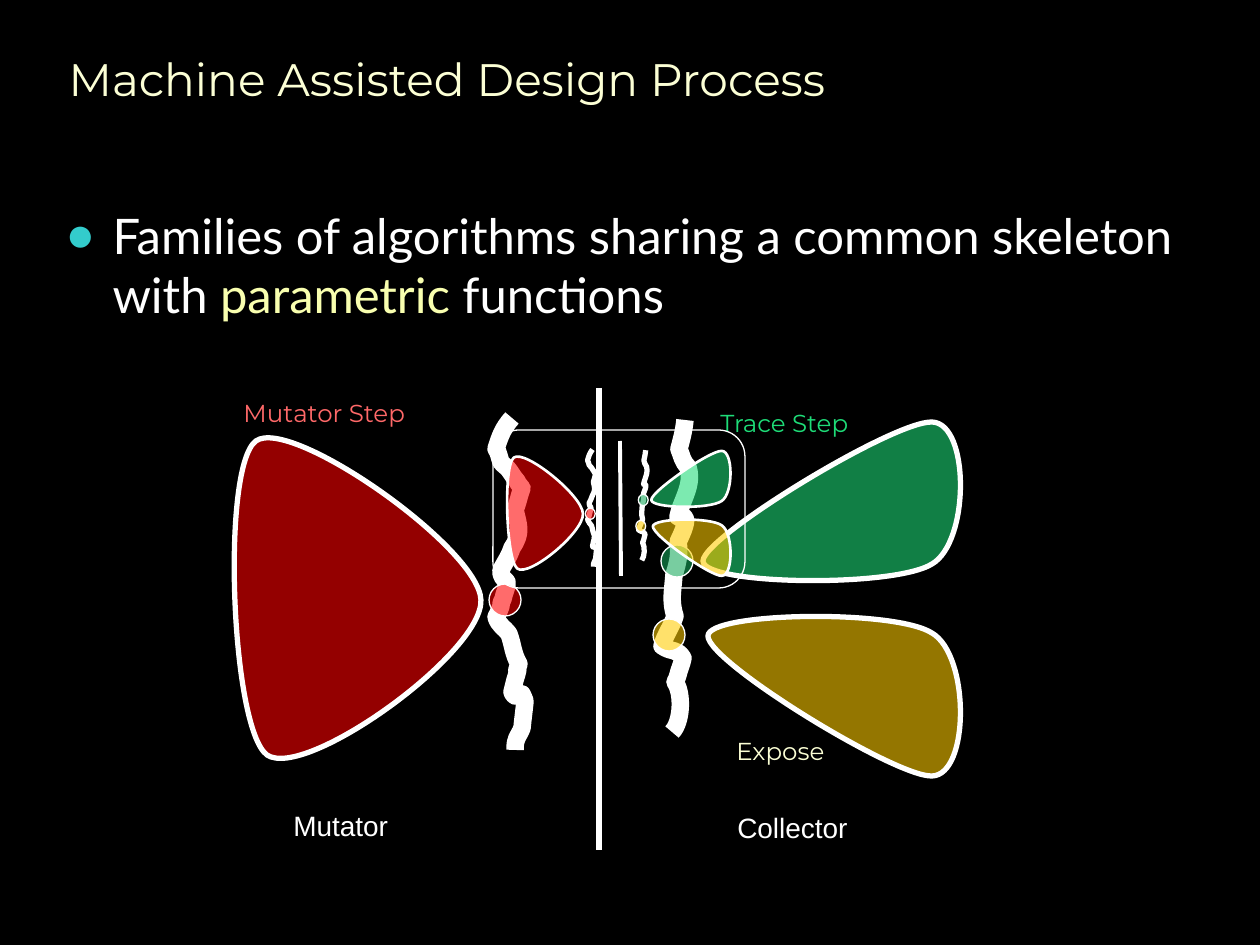
from lxml import etree
from pptx import Presentation
from pptx import util as u
from pptx.dml import color
from pptx.enum import shapes, text
from pptx.oxml import ns

PX = u.Inches(1) / 126
COLORS = {
    "black": "000000", "white": "FFFFFF", "cream": "FCFFD5",
    "accent": "F9FFAF", "bullet": "33CCCC", "red": "FF0000",
    "pink": "FF6969", "green": "1EDC78", "dark green": "17A95D",
    "gold": "FFCC00",
}
OPACITY = 58

# Bezier outlines: a start point, then three points for each curve
LOBES = {
    "red": [(256, 441), (291, 416), (479, 548), (481, 600),
            (483, 653), (305, 781), (267, 755),
            (231, 728), (221, 467), (256, 441)],
    "green": [(932, 422), (970, 423), (970, 542), (932, 564),
              (893, 588), (703, 585), (703, 561),
              (703, 537), (893, 421), (932, 422)],
    "gold": [(932, 776), (970, 775), (970, 655), (932, 633),
             (895, 609), (708, 612), (708, 636),
             (708, 662), (895, 777), (932, 776)],
}
MUTATOR_STRAND = [
    (512, 418), (503, 428), (500, 436), (496, 449),
    (498, 450), (500, 460), (501, 462), (503, 465), (507, 467), (509, 470),
    (512, 474), (514, 478), (517, 481), (518, 484), (522, 488), (522, 488),
    (519, 496), (518, 503), (515, 510), (519, 527), (522, 533), (512, 548),
    (509, 557), (505, 562), (501, 570), (501, 573), (501, 576), (503, 578),
    (504, 580), (507, 580), (507, 582), (508, 586), (504, 593), (503, 599),
    (501, 601), (501, 604), (501, 606), (500, 610), (496, 617), (496, 617),
    (499, 626), (504, 627), (509, 634), (513, 645), (513, 654), (519, 664),
    (513, 680), (522, 658), (515, 680), (514, 684), (512, 692), (512, 692),
    (513, 693), (513, 696), (515, 696), (517, 697), (519, 693), (522, 694),
    (523, 696), (524, 698), (525, 701), (524, 711), (523, 718), (522, 728),
    (518, 738), (515, 737), (515, 750),
]
COLLECTOR_STRAND = [
    (685, 420), (684, 430), (682, 438), (679, 449),
    (682, 456), (682, 461), (688, 467), (692, 481), (687, 491), (682, 504),
    (680, 508), (678, 517), (678, 517), (680, 517), (684, 515), (685, 518),
    (688, 522), (680, 538), (678, 542), (680, 553), (678, 563), (674, 575),
    (673, 590), (670, 601), (675, 616), (672, 626), (665, 635), (662, 646),
    (672, 653), (677, 648), (683, 658), (682, 664), (679, 670), (678, 675),
    (677, 679), (675, 682), (675, 682), (683, 693), (682, 722), (672, 732),
]
NODES = [(489, 584, "red"), (661, 545, "dark green"), (653, 619, "gold")]
NODE_SIZE = 32

# (scale x, scale y, shift x, shift y) of each drawing of the diagram
FULL = (1, 1, 0, 0)
NESTED = (4 / 13, 6 / 17, 435, 302)


def emu(px):
    return u.Emu(round(px * PX))


def rgb(name):
    return color.RGBColor.from_string(COLORS[name])


def add_text(p, content, size=14, font="Montserrat", ink="white"):
    r = p.add_run()
    r.text = content
    r.font.size, r.font.name = u.Pt(size), font
    r.font.color.rgb = rgb(ink)


def bend(sp, closed):
    """Turn each three straight segments of a freeform into one Bezier curve."""
    outline = sp._element.spPr.find(".//" + ns.qn("a:path"))
    segments = outline.findall(ns.qn("a:lnTo"))
    for i in range(0, len(segments), 3):
        curve = etree.SubElement(outline, ns.qn("a:cubicBezTo"))
        for segment in segments[i:i + 3]:
            curve.append(segment[0])
            outline.remove(segment)
    if closed:
        etree.SubElement(outline, ns.qn("a:close"))


class Deck:
    def __init__(self):
        self.prs = Presentation()
        self.prs.slide_width, self.prs.slide_height = emu(1260), emu(945)
        self.s = self.prs.slides.add_slide(self.prs.slide_layouts[1])
        self.s.background.fill.solid()
        self.s.background.fill.fore_color.rgb = rgb("black")
        self.group()

    def group(self, view=FULL):
        self.view = view
        self.target = self.s.shapes.add_group_shape().shapes

    def style(self, sp, fill, width):
        sp.shadow.inherit = False
        if fill:
            sp.fill.solid()
            sp.fill.fore_color.rgb = rgb(fill)
            clr = sp.fill._xPr.find(".//" + ns.qn("a:srgbClr"))
            etree.SubElement(clr, ns.qn("a:alpha"), val=str(OPACITY * 1000))
        else:
            sp.fill.background()
        sp.line.color.rgb, sp.line.width = rgb("white"), u.Pt(width)

    def curve(self, points, width, fill=None):
        kx, ky, dx, dy = self.view
        pts = [(emu(x * kx + dx), emu(y * ky + dy)) for x, y in points]
        fb = self.target.build_freeform(*pts[0])
        fb.add_line_segments(pts[1:], close=False)
        sp = fb.convert_to_shape()
        bend(sp, closed=bool(fill))
        self.style(sp, fill, width)

    def shape(self, kind, x, y, w, h, fill=None):
        kx, ky, dx, dy = self.view
        sp = self.target.add_shape(kind, emu(x * kx + dx), emu(y * ky + dy),
                                   emu(w * kx), emu(h * ky))
        self.style(sp, fill, 0.75)

    def line(self, x1, y1, x2, y2, width):
        ln = self.target.add_connector(shapes.MSO_CONNECTOR.STRAIGHT,
                                       emu(x1), emu(y1), emu(x2), emu(y2))
        ln.line.color.rgb, ln.line.width = rgb("white"), u.Pt(width)
        etree.SubElement(ln._element.spPr, ns.qn("a:effectLst"))

    def label(self, content, box, wrap=True, **fmt):
        tf = self.target.add_textbox(*map(emu, box)).text_frame
        tf.word_wrap = wrap
        tf.vertical_anchor = text.MSO_ANCHOR.MIDDLE
        add_text(tf.paragraphs[0], content, **fmt)

    def placeholder(self, sp, box, anchor):
        sp.left, sp.top, sp.width, sp.height = map(emu, box)
        tf = sp.text_frame
        tf.auto_size = text.MSO_AUTO_SIZE.NONE
        tf.vertical_anchor = anchor
        p = tf.paragraphs[0]
        p.alignment = text.PP_ALIGN.LEFT
        return p

    def title(self, content, box):
        p = self.placeholder(self.s.shapes.title, box, text.MSO_ANCHOR.MIDDLE)
        add_text(p, content, size=26, ink="cream")

    def bullet(self, runs, box):
        p = self.placeholder(self.s.placeholders[1], box, text.MSO_ANCHOR.TOP)
        pPr = p._p.get_or_add_pPr()
        indent = emu(47)
        pPr.set("marL", str(indent))
        pPr.set("indent", str(-indent))
        clr = etree.SubElement(pPr, ns.qn("a:buClr"))
        etree.SubElement(clr, ns.qn("a:srgbClr"), val=COLORS["bullet"])
        etree.SubElement(pPr, ns.qn("a:buChar"), char="●")
        for content, ink in runs:
            add_text(p, content, size=28, font="Lato", ink=ink)

    def lobes(self, width):
        for fill, outline in LOBES.items():
            self.curve(outline, width, fill)

    def strands(self, width):
        for strand in (MUTATOR_STRAND, COLLECTOR_STRAND):
            self.curve(strand, width)
        for x, y, fill in NODES:
            self.shape(shapes.MSO_SHAPE.OVAL, x, y, NODE_SIZE, NODE_SIZE, fill)


def main():
    deck = Deck()

    # Title and statement
    deck.title("Machine Assisted Design Process", (56, 20, 1173, 116))
    deck.bullet([("Families of algorithms sharing a common skeleton with ", "white"),
                 ("parametric", "accent"), (" functions", "white")],
                (53, 199, 1187, 126))

    # Full diagram with its labels
    deck.lobes(3)
    deck.label("Trace Step", (708, 399, 194, 48), ink="green")
    deck.label("Mutator Step", (231, 389, 229, 48), ink="pink")
    deck.label("Expose", (724, 735, 136, 32), ink="cream")
    deck.line(599, 388, 599, 850, 3)
    deck.strands(10)
    for name, box in (("Mutator", (281, 802, 121, 47)),
                      ("Collector", (725, 804, 136, 47))):
        deck.label(name, box, wrap=False, size=16, font="Arial")

    # The same diagram nested inside a frame
    deck.group(NESTED)
    deck.lobes(1.5)
    deck.line(620, 441, 621, 576, 2.25)
    deck.strands(3)
    deck.view = FULL
    deck.shape(shapes.MSO_SHAPE.ROUNDED_RECTANGLE, 493, 430, 252, 158)

    deck.prs.save("out.pptx")


if __name__ == "__main__":
    main()
